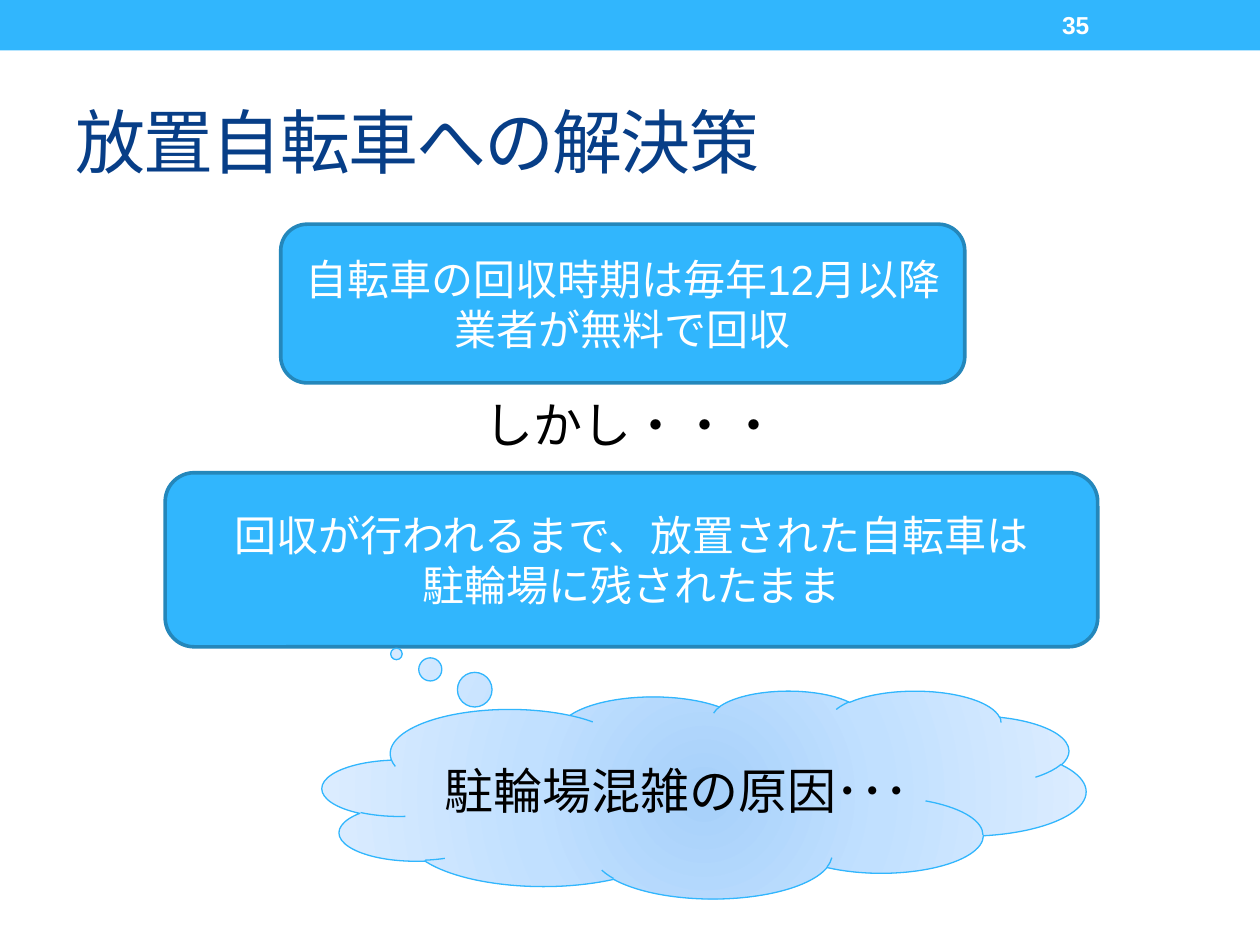
"""Build the slide on what is done about abandoned bicycles."""
import lxml.etree
import pptx
import pptx.dml.color
import pptx.enum.shapes
import pptx.enum.text
import pptx.oxml.ns
import pptx.util

Cm, Pt = pptx.util.Cm, pptx.util.Pt
RGBColor = pptx.dml.color.RGBColor
Shape = pptx.enum.shapes.MSO_SHAPE
Align = pptx.enum.text.PP_ALIGN
Anchor = pptx.enum.text.MSO_ANCHOR
qn = pptx.oxml.ns.qn

SKY = RGBColor(0x31, 0xB6, 0xFD)
EDGE = RGBColor(0x24, 0x87, 0xBB)
NAVY = RGBColor(0x07, 0x3E, 0x87)
WHITE = RGBColor(0xFF, 0xFF, 0xFF)
BLACK = RGBColor(0, 0, 0)
CLOUD_STOPS = [(0, "A6D0FA"), (45, "C1E0FF"), (100, "DDEDFF")]

TITLE = ("放置自転車への解決策", (1.27, 1.47, 22.86, 2.74))
BAR = (0, 0, 25.4, 1.02)
CARDS = [
    (["回収が行われるまで、放置された自転車は", "駐輪場に残されたまま"], (3.33, 9.53, 18.8, 3.51)),
    (["自転車の回収時期は毎年12月以降", "業者が無料で回収"], (5.66, 4.52, 13.79, 3.2)),
]
HOWEVER = ("しかし・・・", (10.46, 7.82, 4.55, 1.45))
NUMBER = ("35", (21.16, 0.05, 2.97, 0.91))
CAUSE = ("駐輪場混雑の原因･･･", (6.5, 13.92, 15.39, 4.19))
CLOUD_TAIL = (-0.403, -0.676)


def lengths(place):
    return [Cm(value) for value in place]


def write(box, lines, align, color, wrap=True, anchor=Anchor.MIDDLE, **font):
    frame = box.text_frame
    frame.word_wrap = wrap
    frame.vertical_anchor = anchor
    for index, line in enumerate(lines):
        para = frame.paragraphs[0] if index == 0 else frame.add_paragraph()
        para.alignment = align
        span = para.add_run()
        span.text = line
        span.font.color.rgb = color
        for name, value in {"name": "Arial", **font}.items():
            setattr(span.font, name, value)


def first_format(box):
    return box.text_frame.paragraphs[0].runs[0].font._element


def add_panel(page, kind, place, fill, line=None, width=0):
    panel = page.shapes.add_shape(kind, *lengths(place))
    panel.shadow.inherit = False
    if fill is None:
        panel.fill.gradient()
    else:
        panel.fill.solid()
        panel.fill.fore_color.rgb = fill
    if line is None:
        panel.line.fill.background()
    else:
        panel.line.color.rgb = line
        panel.line.width = Pt(width)
    return panel


def set_radial(panel, stops):
    gradient = panel.element.spPr.find(qn("a:gradFill"))
    for child in list(gradient):
        gradient.remove(child)
    stop_list = lxml.etree.SubElement(gradient, qn("a:gsLst"))
    for percent, color in stops:
        stop = lxml.etree.SubElement(stop_list, qn("a:gs"), pos=str(percent * 1000))
        lxml.etree.SubElement(stop, qn("a:srgbClr"), val=color)
    circle = lxml.etree.SubElement(gradient, qn("a:path"), {"path": "circle"})
    sides = dict.fromkeys("ltrb", "100000")
    lxml.etree.SubElement(circle, qn("a:fillToRect"), sides)


def main():
    deck = pptx.Presentation()
    deck.slide_width, deck.slide_height = Cm(25.4), Cm(19.05)
    page = deck.slides.add_slide(deck.slide_layouts[5])

    add_panel(page, Shape.RECTANGLE, BAR, SKY)
    for lines, place in CARDS:
        card = add_panel(page, Shape.ROUNDED_RECTANGLE, place, SKY, EDGE, 2.08)
        write(card, lines, Align.CENTER, WHITE, size=Pt(24))

    text, place = TITLE
    title = page.shapes.title
    title.left, title.top, title.width, title.height = lengths(place)
    write(title, [text], Align.LEFT, NAVY, size=Pt(40))
    first_format(title).set("spc", "-100")

    text, place = HOWEVER
    however = page.shapes.add_textbox(*lengths(place))
    write(however, [text], Align.CENTER, BLACK, wrap=False, anchor=Anchor.TOP, size=Pt(28))
    however.text_frame.auto_size = pptx.enum.text.MSO_AUTO_SIZE.NONE
    lxml.etree.SubElement(first_format(however), qn("a:ea"), typeface="Arial")

    text, place = NUMBER
    number = page.shapes.add_textbox(*lengths(place))
    write(number, [text], Align.LEFT, WHITE, size=Pt(14), bold=True)

    text, place = CAUSE
    cloud = add_panel(page, Shape.CLOUD_CALLOUT, place, None, SKY, 0.75)
    cloud.adjustments[0], cloud.adjustments[1] = CLOUD_TAIL
    set_radial(cloud, CLOUD_STOPS)
    write(cloud, [text], Align.CENTER, BLACK, size=Pt(28))

    deck.save("out.pptx")


if __name__ == "__main__":
    main()
